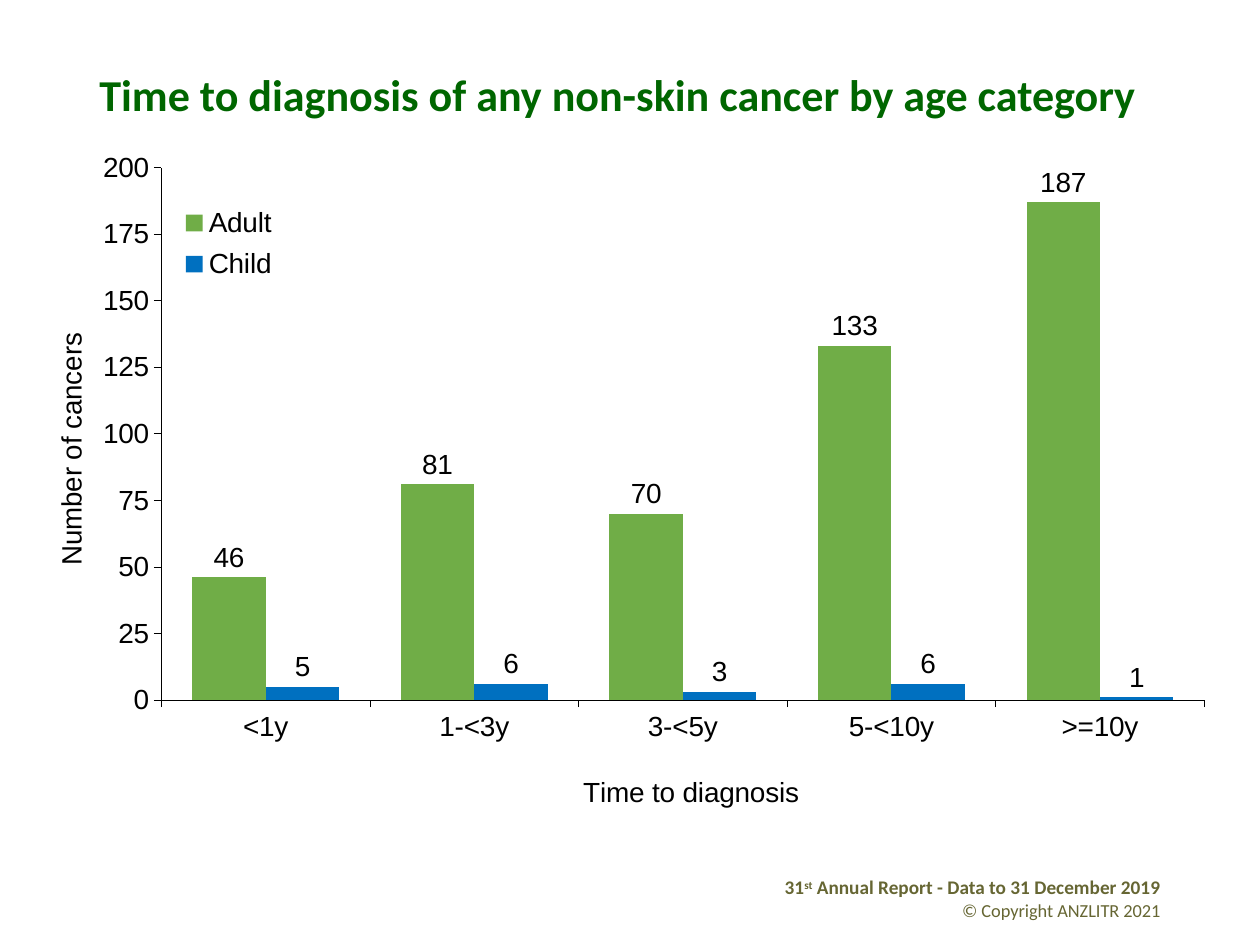
from lxml import etree
from pptx import Presentation
from pptx.chart.data import CategoryChartData
from pptx.dml.color import RGBColor
from pptx.enum.chart import XL_CHART_TYPE, XL_LABEL_POSITION, XL_LEGEND_POSITION, XL_TICK_MARK
from pptx.enum.text import MSO_ANCHOR, PP_ALIGN
from pptx.oxml.ns import qn
from pptx.util import Inches, Pt

CLUSTERED = XL_CHART_TYPE.COLUMN_CLUSTERED
OUTSIDE_END = XL_LABEL_POSITION.OUTSIDE_END
LEGEND_TOP = XL_LEGEND_POSITION.TOP
TICK_OUT, TICK_NONE = XL_TICK_MARK.OUTSIDE, XL_TICK_MARK.NONE
MIDDLE, TOP = MSO_ANCHOR.MIDDLE, MSO_ANCHOR.TOP
LEFT, RIGHT = PP_ALIGN.LEFT, PP_ALIGN.RIGHT

COLORS = {"title": "006600", "footer": "666633", "text": "000000",
          "Adult": "70AD47", "Child": "0070C0"}
TITLE = [[("Time to diagnosis of any non-skin cancer by age category", 25.2, True, 0)]]
FOOTER = [
    [("31", 11, True, 0), ("st", 11, True, 30000),
     (" Annual Report - Data to 31 December 2019", 11, True, 0)],
    [("© Copyright ANZLITR 2021", 10.5, False, 0)],
]
CATEGORIES = ["<1y", "1-<3y", "3-<5y", "5-<10y", ">=10y"]
SERIES = {"Adult": [46, 81, 70, 133, 187], "Child": [5, 6, 3, 6, 1]}
CATEGORY_TITLE = ("Time to diagnosis", 0.48, 0.94)
VALUE_TITLE = ("Number of cancers", 0.04, 0.28)
PLOT_AREA = (0.134, 0.036, 0.866, 0.799)
LEGEND_AREA = (0.14, 0.08, 0.1, 0.14)


def rgb(name):
    return RGBColor.from_string(COLORS[name])


def style_font(font, size, color, name, bold=False):
    font.size, font.name, font.bold = Pt(size), name, bold
    font.color.rgb = rgb(color)


def add_text(slide, box, paragraphs, color, align, anchor, spacing=1.0):
    tf = slide.shapes.add_textbox(*map(Inches, box)).text_frame
    tf.word_wrap = True
    tf.vertical_anchor = anchor
    for i, runs in enumerate(paragraphs):
        p = tf.add_paragraph() if i else tf.paragraphs[0]
        p.alignment, p.line_spacing = align, spacing
        for text, size, bold, baseline in runs:
            r = p.add_run()
            r.text = text
            style_font(r.font, size, color, "Calibri", bold)
            if baseline:
                r._r.get_or_add_rPr().set("baseline", str(baseline))


def set_layout(parent, after, area, inner=False):
    old = parent.find(qn("c:layout"))
    if old is not None:
        parent.remove(old)
    layout = etree.Element(qn("c:layout"))
    manual = etree.SubElement(layout, qn("c:manualLayout"))
    settings = [("layoutTarget", "inner")] if inner else []
    settings += [("xMode", "edge"), ("yMode", "edge")]
    settings += zip("xywh", area)
    for tag, value in settings:
        etree.SubElement(manual, qn("c:" + tag)).set("val", str(value))
    if after is None:
        parent.insert(0, layout)
    else:
        after.addnext(layout)


def style_axis(axis, title, tick):
    text, x, y = title
    axis.has_major_gridlines = False
    axis.major_tick_mark, axis.minor_tick_mark = tick, TICK_NONE
    axis.format.line.color.rgb = rgb("text")
    axis.format.line.width = Pt(0.22)
    style_font(axis.tick_labels.font, 16, "text", "Arial")
    r = axis.axis_title.text_frame.paragraphs[0].add_run()
    r.text = text
    style_font(r.font, 16, "text", "Arial")
    element = axis.axis_title._element
    set_layout(element, element.find(qn("c:tx")), (x, y))


def add_cancer_chart(slide):
    data = CategoryChartData(number_format="0")
    data.categories = CATEGORIES
    for name, values in SERIES.items():
        data.add_series(name, values)
    box = map(Inches, (0, 1.14, 9.56, 5.34))
    chart = slide.shapes.add_chart(CLUSTERED, *box, data).chart
    chart.has_title = False
    style_font(chart.font, 16, "text", "Arial")

    style_axis(chart.category_axis, CATEGORY_TITLE, TICK_OUT)
    axis = chart.value_axis
    style_axis(axis, VALUE_TITLE, TICK_OUT)
    axis.minimum_scale, axis.maximum_scale, axis.major_unit = 0, 200, 25
    axis.tick_labels.number_format = "0"
    axis.tick_labels.number_format_is_linked = False

    plot = chart.plots[0]
    plot.gap_width, plot.overlap, plot.vary_by_categories = 84, 0, False
    for series in plot.series:
        series.format.fill.solid()
        series.format.fill.fore_color.rgb = rgb(series.name)
        labels = series.data_labels
        labels.show_value, labels.position = True, OUTSIDE_END
        labels.number_format, labels.number_format_is_linked = "0", False
        style_font(labels.font, 16, "text", "Arial")

    chart.has_legend = True
    legend = chart.legend
    legend.position, legend.include_in_layout = LEGEND_TOP, True
    style_font(legend.font, 16, "text", "Arial")
    element = legend._element
    set_layout(element, element.find(qn("c:legendPos")), LEGEND_AREA)
    plot_area = chart._chartSpace.chart.plotArea
    set_layout(plot_area, None, PLOT_AREA, inner=True)


def main():
    prs = Presentation()
    prs.slide_width, prs.slide_height = Inches(10), Inches(7.5)
    s = prs.slides.add_slide(prs.slide_layouts[6])
    add_text(s, (5.89, 6.9, 3.42, 0.4), FOOTER, "footer", RIGHT, TOP)
    add_text(s, (0.69, 0.4, 8.62, 0.74), TITLE, "title", LEFT, MIDDLE, 0.9)
    add_cancer_chart(s)
    prs.save("out.pptx")


if __name__ == "__main__":
    main()
